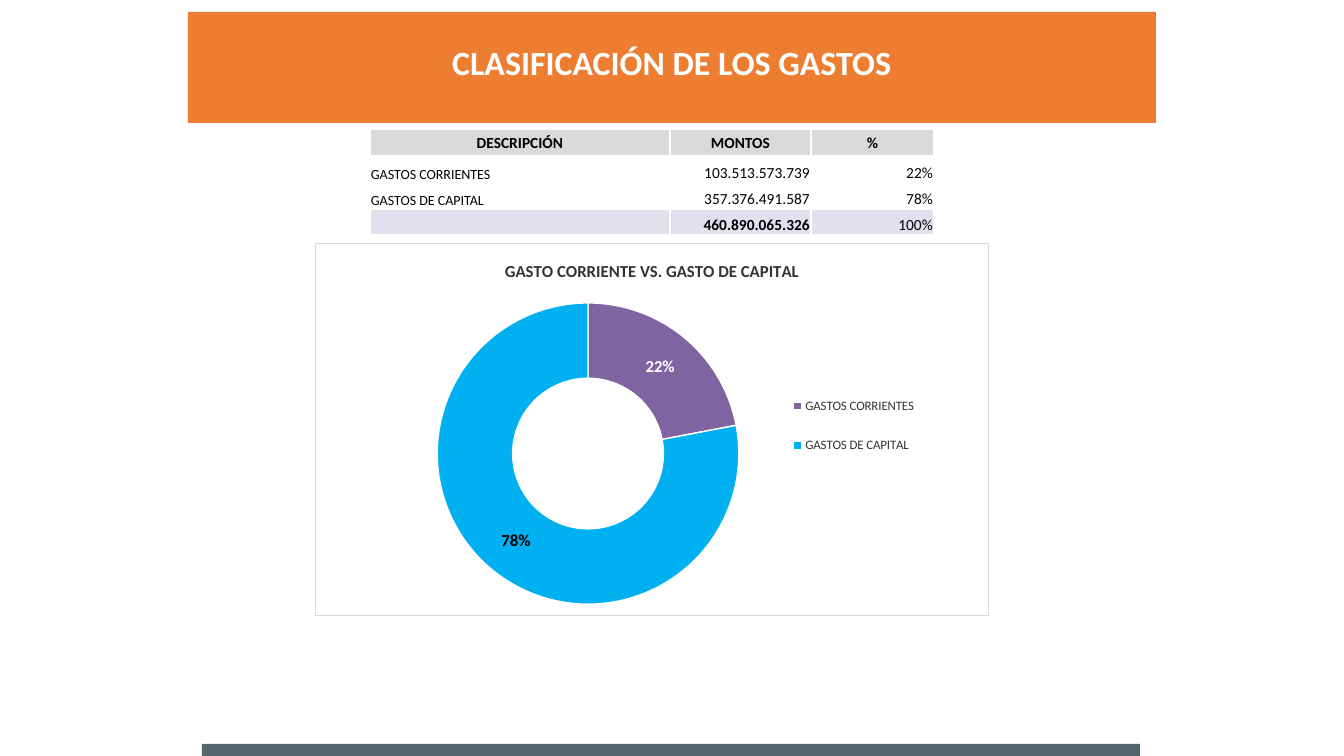
from dataclasses import dataclass
from lxml import etree
from pptx import Presentation
from pptx.chart.data import CategoryChartData
from pptx.dml.color import RGBColor
from pptx.enum.chart import XL_CHART_TYPE, XL_LEGEND_POSITION
from pptx.enum.shapes import MSO_SHAPE
from pptx.enum.text import MSO_ANCHOR, MSO_AUTO_SIZE, PP_ALIGN
from pptx.oxml import parse_xml
from pptx.oxml.ns import nsdecls, qn
from pptx.util import Emu, Pt

DOUGHNUT = XL_CHART_TYPE.DOUGHNUT
LEGEND_RIGHT = XL_LEGEND_POSITION.RIGHT
RECTANGLE = MSO_SHAPE.RECTANGLE
MIDDLE, BOTTOM = MSO_ANCHOR.MIDDLE, MSO_ANCHOR.BOTTOM
LEFT, CENTER, RIGHT = PP_ALIGN.LEFT, PP_ALIGN.CENTER, PP_ALIGN.RIGHT
NO_AUTOFIT = MSO_AUTO_SIZE.NONE


@dataclass(frozen=True)
class Theme:
    font: str = "Calibri"
    orange: str = "ED7D31"
    slate: str = "53666D"
    header: str = "D9D9D9"
    total: str = "E4DFEC"
    purple: str = "8064A2"
    blue: str = "00B0F0"
    white: str = "FFFFFF"
    black: str = "000000"
    gray: str = "333333"
    title_size: float = 24.2
    chart_size: float = 12
    table_size: float = 11
    small_size: float = 10
    legend_size: float = 9.2


THEME = Theme()


def px(*lengths):
    return [Emu(round(length * 914400 / 100.8)) for length in lengths]


def set_font(font, size, color, bold=False):
    font.name = THEME.font
    font.size = Pt(size)
    font.bold = bold
    font.color.rgb = RGBColor.from_string(color)


deck = Presentation()
deck.slide_width, deck.slide_height = px(1344, 756)
page = deck.slides.add_slide(deck.slide_layouts[5])

bands = [((202, 744, 938, 12), THEME.slate), ((188, 12, 968, 111), THEME.orange)]
for place, color in bands:
    band = page.shapes.add_shape(RECTANGLE, *px(*place))
    band.shadow.inherit = False
    band.fill.solid()
    band.fill.fore_color.rgb = RGBColor.from_string(color)
    band.line.fill.background()

rows = [
    ("DESCRIPCIÓN", "MONTOS", "%"),
    ("GASTOS CORRIENTES", "103.513.573.739", "22%"),
    ("GASTOS DE CAPITAL", "357.376.491.587", "78%"),
    ("", "460.890.065.326", "100%"),
]
row_fills = [THEME.header, None, None, THEME.total]
last_row = len(rows) - 1
table = page.shapes.add_table(4, 3, *px(370, 129, 564, 106)).table
for column, width in zip(table.columns, px(300, 141, 123)):
    column.width = width
for row, height in zip(table.rows, px(27, 27, 26, 26)):
    row.height = height
for row_index, texts in enumerate(rows):
    is_header = row_index == 0
    for column_index, text in enumerate(texts):
        cell = table.cell(row_index, column_index)
        cell.margin_left, cell.margin_right, cell.margin_top, cell.margin_bottom = px(1, 1, 1, 0)
        cell.vertical_anchor = MIDDLE if is_header else BOTTOM
        if row_fills[row_index]:
            cell.fill.solid()
            cell.fill.fore_color.rgb = RGBColor.from_string(row_fills[row_index])
        else:
            cell.fill.background()
        para = cell.text_frame.paragraphs[0]
        is_label = column_index == 0 and not is_header
        is_bold = is_header or (row_index == last_row and column_index == 1)
        size = THEME.small_size if is_label else THEME.table_size
        para.alignment = CENTER if is_header else LEFT if is_label else RIGHT
        set_font(para.font, size, THEME.black, is_bold)
        if text:
            para.add_run().text = text
        else:
            end = etree.SubElement(para._p, qn("a:endParaRPr"))
            end.set("sz", str(THEME.small_size * 100))

data = CategoryChartData(number_format="0%")
data.categories = ["GASTOS CORRIENTES", "GASTOS DE CAPITAL"]
data.add_series("Series 1", (0.22, 0.78))
chart = page.shapes.add_chart(DOUGHNUT, *px(315, 243, 674, 373), data).chart
set_font(chart.font, THEME.small_size, THEME.black)

chart.has_title = True
title_para = chart.chart_title.text_frame.paragraphs[0]
title_para.add_run().text = "GASTO CORRIENTE VS. GASTO DE CAPITAL"
set_font(title_para.font, THEME.chart_size, THEME.gray, True)
chart.chart_title.include_in_layout = False

chart.has_legend = True
chart.legend.position = LEGEND_RIGHT
chart.legend.include_in_layout = False
set_font(chart.legend.font, THEME.legend_size, THEME.gray)

plot = chart.plots[0]
plot.vary_by_categories = True
plot.has_data_labels = True
labels = plot.data_labels
labels.show_value = True
labels.show_percentage = False
labels.number_format = "0%"
labels.number_format_is_linked = False
set_font(labels.font, THEME.chart_size, THEME.white, True)
series = plot.series[0]
for index, color in enumerate((THEME.purple, THEME.blue)):
    point = series.points[index]
    point.format.fill.solid()
    point.format.fill.fore_color.rgb = RGBColor.from_string(color)
    point.format.line.color.rgb = RGBColor.from_string(THEME.white)
    point.format.line.width = Pt(1)
    label_color = THEME.white if index == 0 else THEME.black
    set_font(point.data_label.font, THEME.chart_size, label_color, True)

space = chart._chartSpace
space.find(".//" + qn("c:holeSize")).set("val", "75")
space.find(qn("c:chart")).addnext(parse_xml(
    f'<c:spPr {nsdecls("c", "a")}>'
    f'<a:solidFill><a:srgbClr val="{THEME.white}"/></a:solidFill>'
    f'<a:ln w="9525"><a:solidFill><a:srgbClr val="{THEME.header}"/></a:solidFill></a:ln>'
    '</c:spPr>'))

layouts = [
    ("c:plotArea", '<c:layoutTarget val="inner"/>', (0.18, 0.16, 0.45, 0.81)),
    ("c:legend", "", (0.69, 0.35, 0.22, 0.28)),
]
for tag, target, (left, top, width, height) in layouts:
    part = space.find(".//" + qn(tag))
    old_layout = part.find(qn("c:layout"))
    if old_layout is not None:
        part.remove(old_layout)
    layout = parse_xml(
        f'<c:layout {nsdecls("c")}><c:manualLayout>{target}'
        '<c:xMode val="edge"/><c:yMode val="edge"/>'
        f'<c:x val="{left}"/><c:y val="{top}"/><c:w val="{width}"/><c:h val="{height}"/>'
        '</c:manualLayout></c:layout>')
    part.insert(1 if tag == "c:legend" else 0, layout)

title = page.shapes.title
title.left, title.top, title.width, title.height = px(168, 36, 1008, 51)
title.text_frame.text = "CLASIFICACIÓN DE LOS GASTOS"
title.text_frame.word_wrap = True
title.text_frame.auto_size = NO_AUTOFIT
title.text_frame.vertical_anchor = MIDDLE
title_para = title.text_frame.paragraphs[0]
title_para.alignment = CENTER
set_font(title_para.font, THEME.title_size, THEME.white, True)
title.element.getparent().append(title.element)

deck.save("out.pptx")
